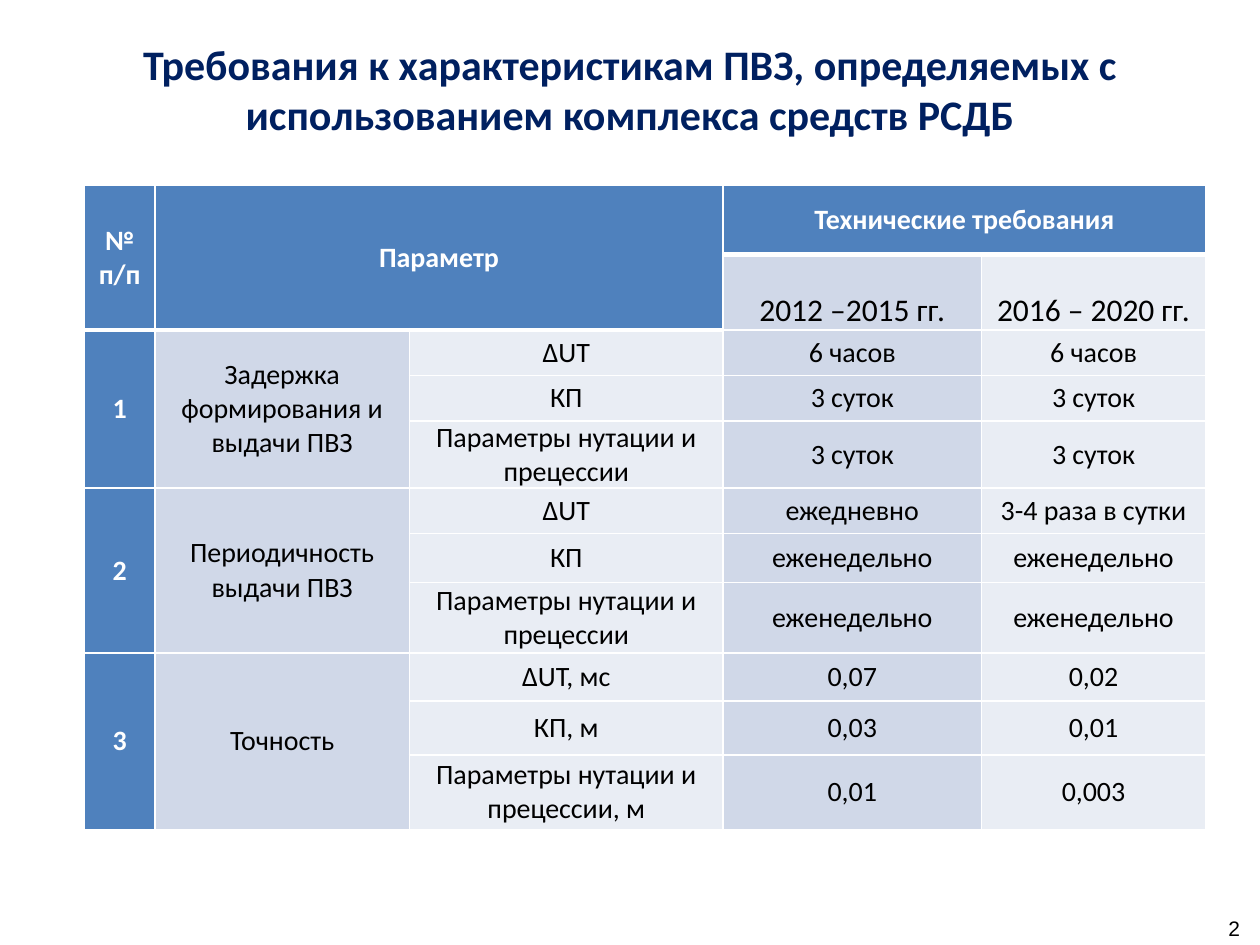
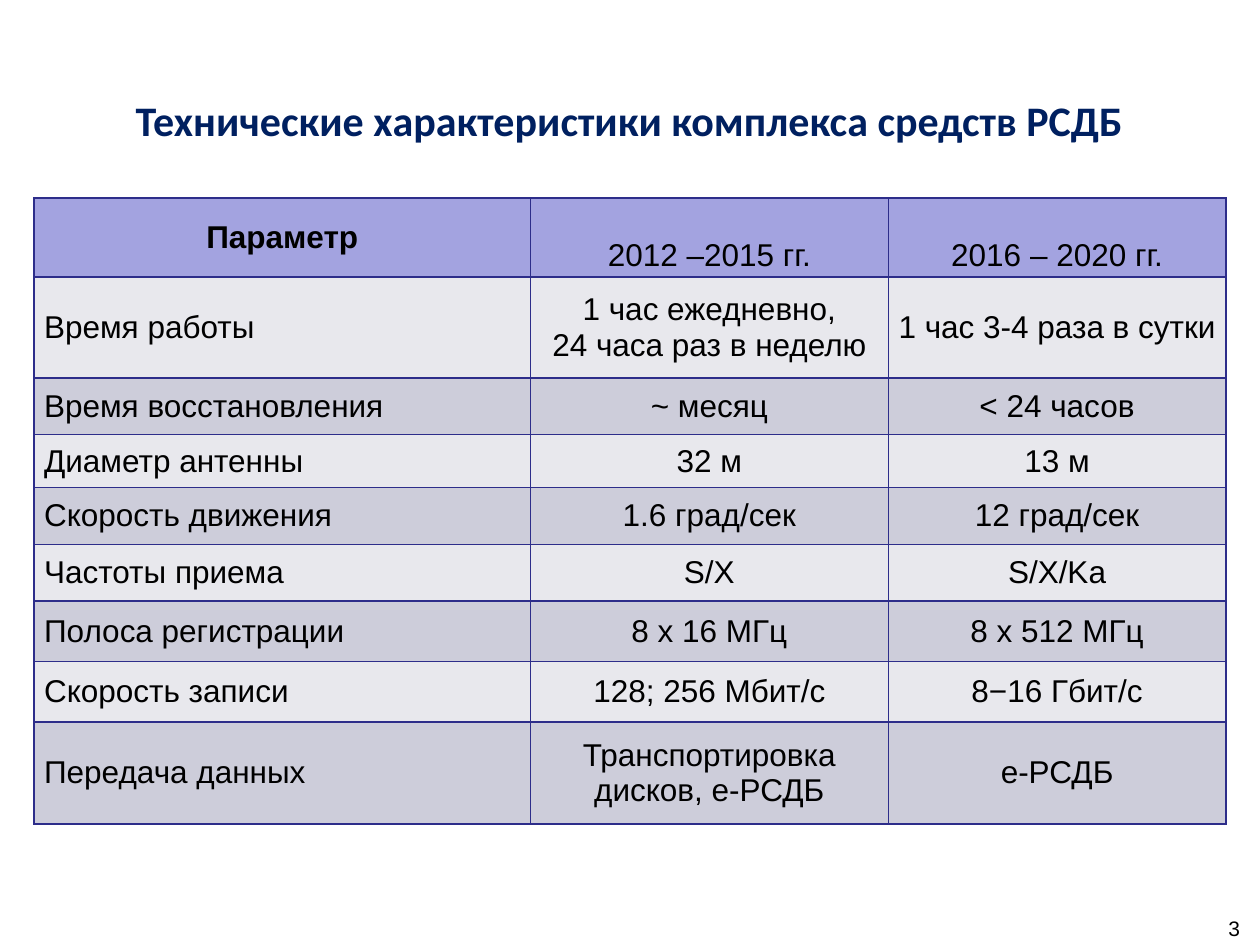
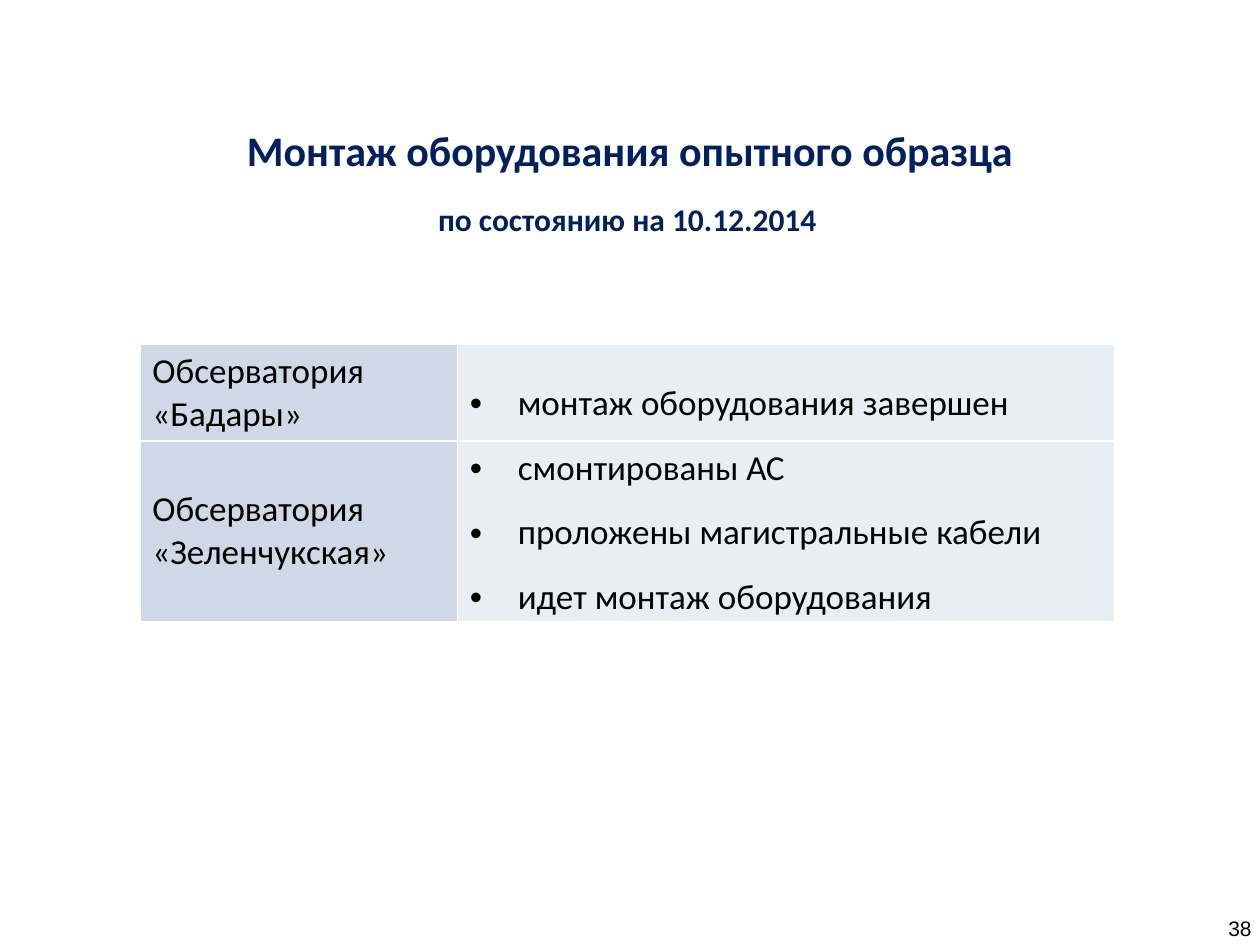
from lxml import etree
from pptx import Presentation
from pptx.dml.color import RGBColor
from pptx.enum import text
from pptx.oxml import ns
from pptx.util import Inches, Pt

# Shared look
NAVY, BLACK, WHITE = "002060", "000000", "FFFFFF"
BLUE, BLUE_MID, BLUE_PALE = "4F81BD", "D0D8E8", "E9EDF4"
LILAC, GREY_MID, GREY_PALE, INDIGO = "A3A3E0", "CDCDDA", "E8E8ED", "2D2D8A"
LEFT, CENTER = text.PP_ALIGN.LEFT, text.PP_ALIGN.CENTER
TOP, MIDDLE, BOTTOM = (text.MSO_ANCHOR.TOP, text.MSO_ANCHOR.MIDDLE,
                       text.MSO_ANCHOR.BOTTOM)


def color(value):
    return RGBColor.from_string(value)


def style_text(frame, size, hue=BLACK, bold=False, align=CENTER, face="Calibri"):
    for para in frame.paragraphs:
        para.alignment = align
        font = para.font
        font.name, font.size, font.bold = face, Pt(size), bold
        font.color.rgb = color(hue)


def place(shape, box):
    shape.left, shape.top, shape.width, shape.height = map(Inches, box)


# Page parts
def add_page(deck, title, box, number, anchor=MIDDLE):
    page = deck.slides.add_slide(deck.slide_layouts[5])
    heading = page.shapes.title
    place(heading, box)
    frame = heading.text_frame
    frame.text = title
    frame.auto_size = text.MSO_AUTO_SIZE.NONE
    frame.vertical_anchor = anchor
    if anchor == TOP:
        frame.margin_top = 0
    style_text(frame, 24, NAVY, True)
    add_label(page, number, (9.65, 7.22, 0.51, 0.3), 12, align=LEFT,
              face="Arial", anchor=TOP)
    return page


def add_label(page, words, box, size, anchor=MIDDLE, **look):
    frame = page.shapes.add_textbox(*map(Inches, box)).text_frame
    frame.word_wrap = True
    frame.vertical_anchor = anchor
    frame.text = words
    style_text(frame, size, **look)


# Table parts
def add_grid(page, left, top, widths, heights):
    box = map(Inches, (left, top, sum(widths), sum(heights)))
    table = page.shapes.add_table(len(heights), len(widths), *box).table
    table.first_row = table.horz_banding = False
    for column, width in zip(table.columns, widths):
        column.width = Inches(width)
    for row, height in zip(table.rows, heights):
        row.height = Inches(height)
    return table


def format_cell(cell, fill, line, side=0.1, edge=0.0, anchor=MIDDLE, heavy=""):
    """Fill, insets and borders; sides named in heavy get a 3 pt line."""
    cell.fill.solid()
    cell.fill.fore_color.rgb = color(fill)
    cell.margin_left = cell.margin_right = Inches(side)
    cell.margin_top = cell.margin_bottom = Inches(edge)
    cell.vertical_anchor = anchor
    properties = cell._tc.get_or_add_tcPr()
    for index, name in enumerate("LRTB"):
        border = etree.Element(ns.qn("a:ln" + name),
                               w=str(Pt(3 if name in heavy else 1)))
        solid = etree.SubElement(border, ns.qn("a:solidFill"))
        etree.SubElement(solid, ns.qn("a:srgbClr"), val=line)
        properties.insert(index, border)


def add_bullets(frame):
    for para in frame.paragraphs:
        properties = para._p.get_or_add_pPr()
        properties.set("marL", str(Inches(0.38)))
        properties.set("indent", str(-Inches(0.38)))
        etree.SubElement(properties, ns.qn("a:buFont"), typeface="Arial")
        etree.SubElement(properties, ns.qn("a:buChar"), char="•")


# Requirements table: two header rows, then groups of three rows
def add_requirements(page, left, top):
    groups = [
        ("Задержка формирования и выдачи ПВЗ", [
            ("ΔUT", "6 часов", "6 часов"),
            ("КП", "3 суток", "3 суток"),
            ("Параметры нутации и прецессии", "3 суток", "3 суток")]),
        ("Периодичность\vвыдачи ПВЗ", [
            ("ΔUT", "ежедневно", "3-4 раза в сутки"),
            ("КП", "еженедельно", "еженедельно"),
            ("Параметры нутации и прецессии", "еженедельно", "еженедельно")]),
        ("Точность", [
            ("ΔUT, мс", "0,07", "0,02"),
            ("КП, м", "0,03", "0,01"),
            ("Параметры нутации и прецессии, м", "0,01", "0,003")]),
    ]
    rows = [["№ п/п", "Параметр", "", "Технические требования", ""],
            ["", "", "", "2012 –2015 гг.", "2016 – 2020 гг."]]
    for number, (name, items) in enumerate(groups, 1):
        for index, item in enumerate(items):
            rows.append([*(("", "") if index else (str(number), name)), *item])

    table = add_grid(page, left, top, [0.56, 2.02, 2.49, 2.05, 1.78],
                     [0.55, 0.6, 0.36, 0.36, 0.53, 0.36, 0.39, 0.56,
                      0.38, 0.43, 0.59])
    for r, row in enumerate(rows):
        for c, words in enumerate(row):
            cell = table.cell(r, c)
            header_end = 1 if c < 3 else 0
            strong = r <= header_end or c == 0
            years = r == 1 and c > 2
            fill = BLUE if strong else BLUE_MID if c in (1, 3) else BLUE_PALE
            heavy = {header_end: "B", header_end + 1: "T"}.get(r, "")
            format_cell(cell, fill, WHITE, 0.02, heavy=heavy,
                        anchor=BOTTOM if years else MIDDLE)
            cell.text = words
            style_text(cell.text_frame, 18 if years else 16,
                       WHITE if strong else BLACK, strong)

    spans = [(0, 0, 1, 0), (0, 1, 1, 2), (0, 3, 0, 4)]
    spans += [(r, c, r + 2, c) for r in (2, 5, 8) for c in (0, 1)]
    for first_row, first_col, last_row, last_col in spans:
        table.cell(first_row, first_col).merge(table.cell(last_row, last_col))


# Specifications table: one header row, then banded rows
def add_specifications(page, left, top):
    rows = [
        ("Параметр", "2012 –2015 гг.", "2016 – 2020 гг."),
        ("Время работы", "1 час ежедневно,\v24 часа раз в неделю",
         "1 час 3-4 раза в сутки"),
        ("Время восстановления", "~ месяц", "< 24 часов"),
        ("Диаметр антенны", "32 м", "13 м"),
        ("Скорость движения", "1.6 град/сек", "12 град/сек"),
        ("Частоты приема", "S/X", "S/X/Ka"),
        ("Полоса регистрации", "8 х 16 МГц", "8 х 512 МГц"),
        ("Скорость записи", "128; 256 Мбит/с", "8−16 Гбит/с"),
        ("Передача данных", "Транспортировка дисков, е-РСДБ", "е-РСДБ"),
    ]
    table = add_grid(page, left, top, [3.94, 2.84, 2.68],
                     [0.63, 0.8, 0.45, 0.42, 0.45, 0.45, 0.48, 0.48, 0.81])
    for r, row in enumerate(rows):
        for c, words in enumerate(row):
            cell = table.cell(r, c)
            years = r == 0 and c > 0
            fill = LILAC if r == 0 else GREY_PALE if r % 2 else GREY_MID
            format_cell(cell, fill, INDIGO, 0.02 if years else 0.08,
                        0.03 if years else 0, BOTTOM if years else MIDDLE)
            cell.text = words
            style_text(cell.text_frame, 18, bold=r == c == 0, face="Arial",
                       align=LEFT if r and c == 0 else CENTER)


# Installation table: observatory and its state of work
def add_progress(page, left, top):
    rows = [
        ("Обсерватория «Бадары»", ["монтаж оборудования завершен"]),
        ("Обсерватория «Зеленчукская»",
         ["смонтированы АС", "проложены магистральные кабели",
          "идет монтаж оборудования"]),
    ]
    table = add_grid(page, left, top, [2.52, 5.22], [0.77, 1.43])
    for r, (place_name, works) in enumerate(rows):
        name_cell, work_cell = table.cell(r, 0), table.cell(r, 1)
        format_cell(name_cell, BLUE_MID, WHITE, edge=0.05)
        format_cell(work_cell, BLUE_PALE, WHITE, edge=0.05)
        name_cell.text = place_name
        frame = work_cell.text_frame
        frame.text = "\n".join(works)
        for index, para in enumerate(frame.paragraphs):
            if index or len(works) == 1:
                para.line_spacing = 1.5
        add_bullets(frame)
        for cell in (name_cell, work_cell):
            style_text(cell.text_frame, 20, align=LEFT)


def main():
    deck = Presentation()
    deck.slide_width, deck.slide_height = Inches(10), Inches(7.5)

    page = add_page(deck, "Требования к характеристикам ПВЗ, определяемых с "
                    "использованием комплекса средств РСДБ",
                    (0, 0.36, 10, 0.69), "2")
    add_requirements(page, 0.67, 1.47)

    page = add_page(deck, "Технические характеристики комплекса средств РСДБ",
                    (0.35, 0.75, 9.29, 0.72), "3", TOP)
    add_specifications(page, 0.27, 1.57)

    page = add_page(deck, "Монтаж оборудования опытного образца",
                    (0, 0.84, 10, 0.69), "38")
    add_progress(page, 1.11, 2.73)
    add_label(page, "по состоянию на 10.12.2014", (-0.02, 1.39, 10, 0.69),
              18, hue=NAVY, bold=True)

    deck.save("out.pptx")


if __name__ == "__main__":
    main()
